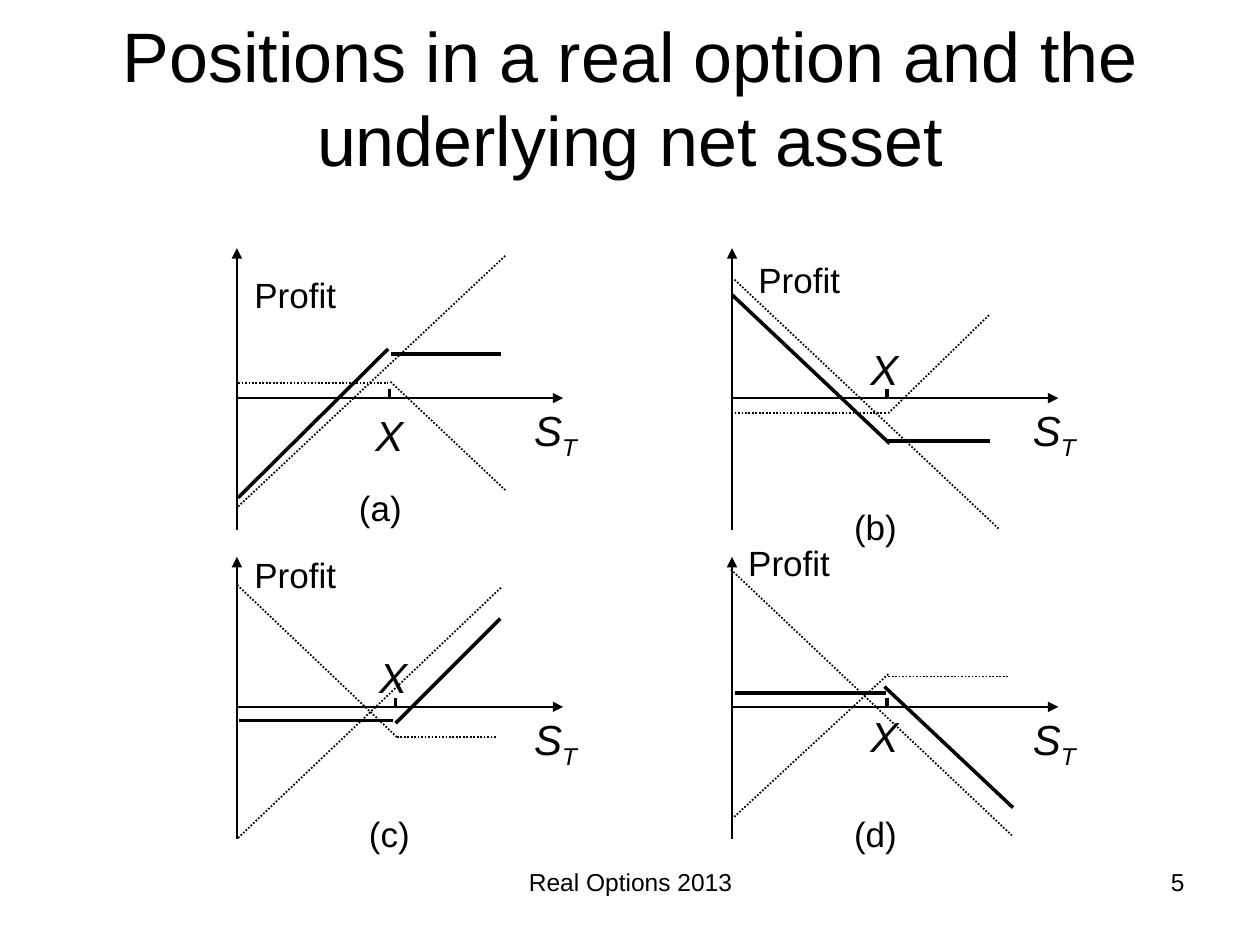
from dataclasses import dataclass

from lxml import etree
from pptx import Presentation
from pptx import util as u
from pptx.dml.color import RGBColor
from pptx.enum import dml, shapes, text
from pptx.oxml import ns

BLACK = RGBColor(0x00, 0x00, 0x00)
FONT = "Arial"
COLUMNS = (1.88, 5.81)
ROWS = (3.16, 5.61)
AXIS_LENGTH = 2.59
AXIS_TOP, AXIS_BOTTOM = 1.19, -1.05
TICK_TOP = 0.07


@dataclass
class Panel:
    name: str
    column: int
    row: int
    strike: float
    profit_at: tuple
    strike_at: tuple
    name_at: tuple
    asset_at: tuple
    combined: tuple
    components: tuple

    def place(self, point):
        right, up = point
        return COLUMNS[self.column] + right, ROWS[self.row] - up


PANELS = (
    Panel("(a)", 0, 0, 1.21, (0.04, 1.04), (1.0, -0.04), (0.87, -0.65), (2.26, 0),
          (((0.01, -0.79), (1.2, 0.39)), ((1.22, 0.35), (2.1, 0.35))),
          (((0.01, 0.12), (1.2, 0.12)), ((1.22, 0.13), (2.13, -0.73)),
           ((2.13, 1.13), (0, -0.87)))),
    Panel("(b)", 1, 0, 1.23, (0.11, 1.16), (1.0, 0.48), (0.87, -0.8), (2.29, 0),
          (((1.24, -0.34), (2.05, -0.34)), ((1.25, -0.36), (0, 0.82))),
          (((0.02, -0.12), (1.22, -0.12)), ((1.24, -0.12), (2.04, 0.66)),
           ((0.02, 0.94), (2.12, -1.04)))),
    Panel("(c)", 0, 1, 1.26, (0.04, 1.27), (1.03, 0.49), (0.95, -0.79), (2.26, 0),
          (((0.02, -0.11), (1.24, -0.11)), ((1.26, -0.13), (2.09, 0.7))),
          (((1.27, -0.24), (0, 0.97)), ((1.27, -0.24), (2.06, -0.24)),
           ((0.01, -1.04), (2.1, 0.95)))),
    Panel("(d)", 1, 1, 1.23, (0.03, 1.36), (1.0, 0.02), (0.87, -0.79), (2.29, 0),
          (((0.02, 0.11), (1.22, 0.11)), ((2.23, -0.8), (1.21, 0.16))),
          (((-0.01, 1.09), (2.22, -1.02)), ((1.24, 0.24), (2.19, 0.24)),
           ((1.24, 0.26), (0.01, -0.88)))),
)


def add_line(slide, start, end, width=1, dotted=False, arrow=False):
    line = slide.shapes.add_connector(
        shapes.MSO_CONNECTOR.STRAIGHT, *(u.Inches(v) for v in (*start, *end)))
    line.line.color.rgb = BLACK
    line.line.width = u.Pt(width)
    if dotted:
        line.line.dash_style = dml.MSO_LINE.ROUND_DOT
    if arrow:
        outline = line.line._get_or_add_ln()
        etree.SubElement(outline, ns.qn("a:tailEnd"), type="triangle")
    etree.SubElement(line._element.spPr, ns.qn("a:effectLst"))


def add_label(slide, words, position, size, points, align=text.PP_ALIGN.LEFT,
              anchor=text.MSO_ANCHOR.TOP, italic=False, subscript=None):
    label = slide.shapes.add_textbox(*(u.Inches(v) for v in (*position, *size)))
    frame = label.text_frame
    frame.word_wrap = True
    frame.vertical_anchor = anchor
    paragraph = frame.paragraphs[0]
    paragraph.alignment = align
    font = paragraph.font
    font.name, font.size, font.italic = FONT, u.Pt(points), italic
    font.color.rgb = BLACK
    paragraph.add_run().text = words
    if subscript:
        lowered = paragraph.add_run()
        lowered.text = subscript
        lowered.font._element.set("baseline", "-25000")


def add_panel(slide, panel):
    place = panel.place
    add_line(slide, place((0, AXIS_BOTTOM)), place((0, AXIS_TOP)), arrow=True)
    add_line(slide, place((0, 0)), place((AXIS_LENGTH, 0)), arrow=True)
    add_line(slide, place((panel.strike, 0)), place((panel.strike, TICK_TOP)), width=2)
    for start, end in panel.combined:
        add_line(slide, place(start), place(end), width=2)
    for start, end in panel.components:
        add_line(slide, place(start), place(end), dotted=True)
    add_label(slide, "Profit", place(panel.profit_at), (1.16, 0.43), 20)
    add_label(slide, "S", place(panel.asset_at), (0.56, 0.5), 24,
              italic=True, subscript="T")
    add_label(slide, "X", place(panel.strike_at), (0.42, 0.5), 24, italic=True)
    add_label(slide, panel.name, place(panel.name_at), (0.58, 0.43), 20)


def main():
    deck = Presentation()
    deck.slide_width, deck.slide_height = u.Inches(10), u.Inches(7.5)
    slide = deck.slides.add_slide(deck.slide_layouts[6])
    add_label(slide, "Positions in a real option and the underlying net asset",
              (0.75, 0.14), (8.5, 1.25), 40, text.PP_ALIGN.CENTER,
              text.MSO_ANCHOR.MIDDLE)
    for panel in PANELS:
        add_panel(slide, panel)
    add_label(slide, "Real Options 2013", (3.42, 6.83), (3.17, 0.52), 14,
              text.PP_ALIGN.CENTER)
    add_label(slide, "5", (7.17, 6.83), (2.33, 0.52), 14, text.PP_ALIGN.RIGHT)
    deck.save("out.pptx")


if __name__ == "__main__":
    main()
